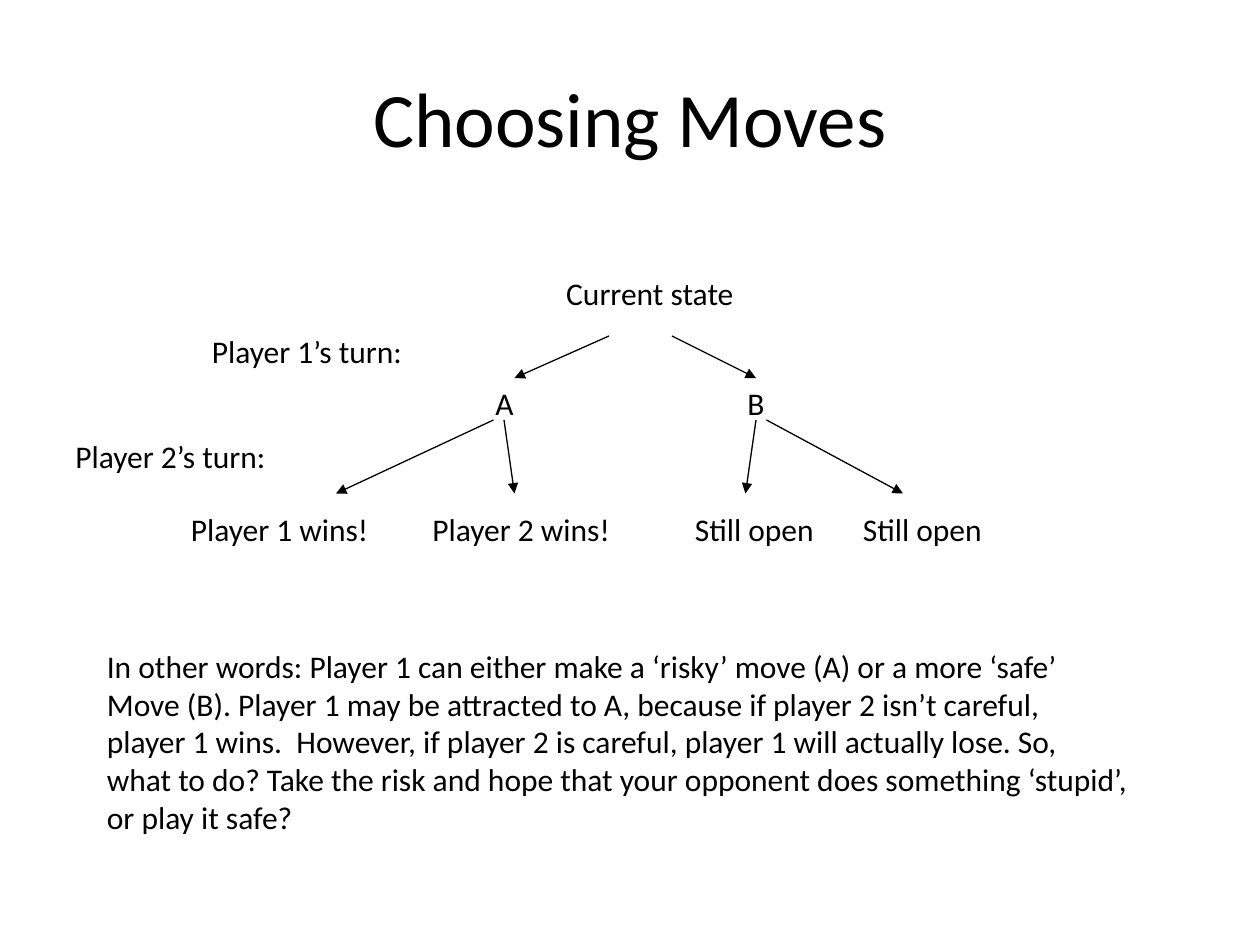
import pptx
import pptx.dml.color
import pptx.enum.shapes
import pptx.enum.text
import pptx.oxml.ns
import pptx.util
from lxml import etree

PX = 9525  # EMU per px, 96 px to the inch
FONT = "Calibri"
BLACK = "000000"
LABEL_HEIGHT = 38


def px(length):
    return pptx.util.Emu(length * PX)


def color(hex_string):
    return pptx.dml.color.RGBColor.from_string(hex_string)


def add_run(paragraph, text, size):
    run = paragraph.add_run()
    run.text = text
    run.font.name = FONT
    run.font.size = pptx.util.Pt(size)
    run.font.color.rgb = color(BLACK)


def add_text(slide, left, top, width, height, lines):
    shape = slide.shapes.add_textbox(px(left), px(top), px(width), px(height))
    frame = shape.text_frame
    frame.word_wrap = False
    frame.auto_size = pptx.enum.text.MSO_AUTO_SIZE.SHAPE_TO_FIT_TEXT
    for index, line in enumerate(lines):
        paragraph = frame.add_paragraph() if index else frame.paragraphs[0]
        add_run(paragraph, line, 18)


def add_arrow(slide, start_x, start_y, end_x, end_y):
    connector = slide.shapes.add_connector(
        pptx.enum.shapes.MSO_CONNECTOR.STRAIGHT,
        px(start_x), px(start_y), px(end_x), px(end_y))
    connector.line.color.rgb = color(BLACK)
    connector.line.width = pptx.util.Pt(0.75)
    line = connector.line._get_or_add_ln()
    etree.SubElement(line, pptx.oxml.ns.qn("a:tailEnd"), type="triangle")
    etree.SubElement(connector._element.spPr, pptx.oxml.ns.qn("a:effectLst"))


def add_title(slide, left, top, width, height):
    title = slide.shapes.title
    title.left, title.top = px(left), px(top)
    title.width, title.height = px(width), px(height)
    frame = title.text_frame
    frame.vertical_anchor = pptx.enum.text.MSO_ANCHOR.MIDDLE
    paragraph = frame.paragraphs[0]
    paragraph.alignment = pptx.enum.text.PP_ALIGN.CENTER
    add_run(paragraph, "Choosing Moves", 44)


def add_game_tree(slide, left, top):
    # Labels: text, left, top, width
    move_top, outcome_top = 84, 180
    labels = [
        ("Current state", 374, 0, 158),
        ("A", 320, move_top, 36),
        ("B", 512, move_top, 36),
        ("Player 1 wins!", 88, outcome_top, 169),
        ("Player 2 wins!", 272, outcome_top, 169),
        ("Still open", 472, outcome_top, 118),
        ("Still open", 600, outcome_top, 118),
        ("Player 1’s turn:", 104, 44, 180),
        ("Player 2’s turn:", 0, 124, 180),
    ]
    for text, x, y, width in labels:
        add_text(slide, left + x, top + y, width, LABEL_HEIGHT, [text])

    # Arrows by level: start y, end y, pairs of start x and end x
    levels = [
        (52, 84, [(416, 344), (464, 528)]),
        (116, 172, [(328, 208), (336, 344), (528, 520), (536, 640)]),
    ]
    for start_y, end_y, pairs in levels:
        for start_x, end_x in pairs:
            add_arrow(slide, left + start_x, top + start_y,
                      left + end_x, top + end_y)


def add_explanation(slide, left, top, width, height):
    add_text(slide, left, top, width, height, [
        "In other words: Player 1 can either make a ‘risky’ move (A) or a more ‘safe’",
        "Move (B). Player 1 may be attracted to A, because if player 2 isn’t careful,",
        "player 1 wins.  However, if player 2 is careful, player 1 will actually lose. So,",
        "what to do? Take the risk and hope that your opponent does something ‘stupid’,",
        "or play it safe?",
    ])


def main():
    presentation = pptx.Presentation()
    presentation.slide_width = px(960)
    presentation.slide_height = px(720)
    slide = presentation.slides.add_slide(presentation.slide_layouts[5])
    add_title(slide, 48, 29, 864, 120)
    add_game_tree(slide, 48, 204)
    add_explanation(slide, 72, 488, 865, 154)
    presentation.save("out.pptx")


if __name__ == "__main__":
    main()
